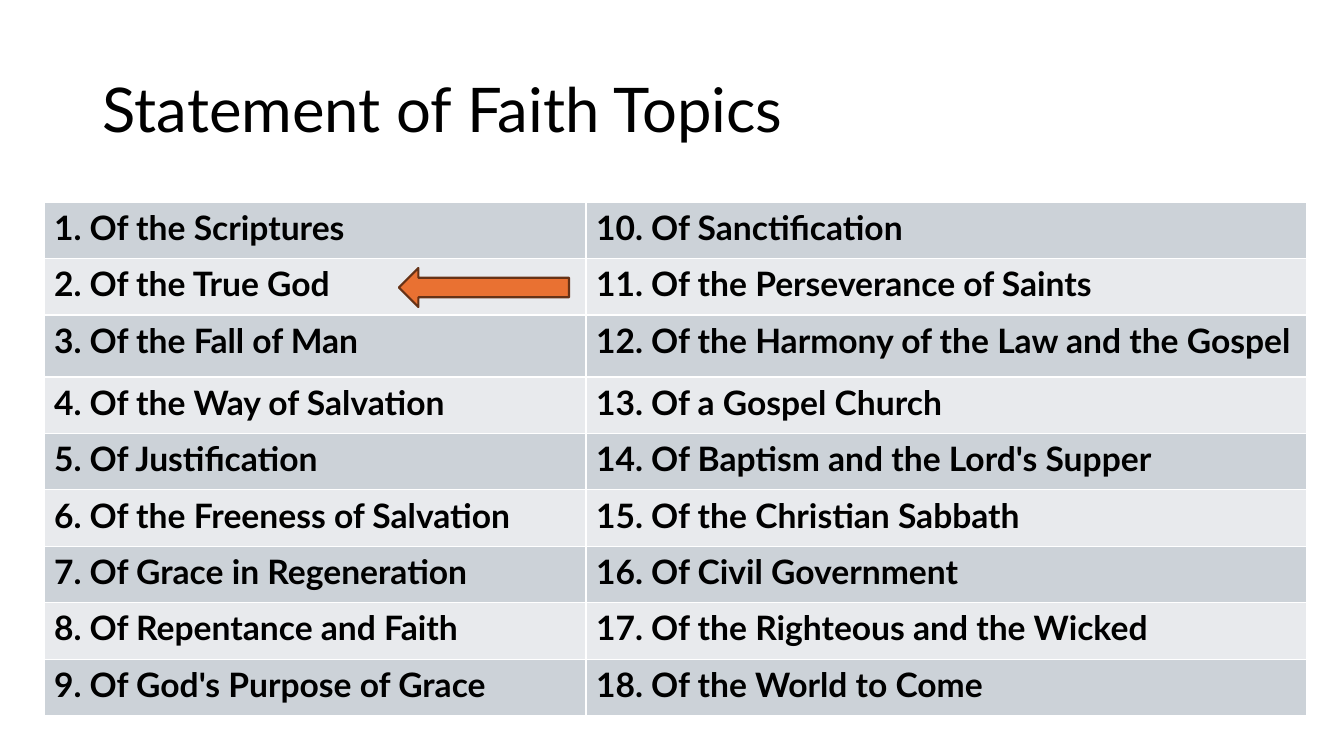
"""Build the Statement of Faith Topics slide."""
import pptx
import pptx.dml.color
import pptx.enum.shapes
import pptx.enum.text
import pptx.oxml
import pptx.oxml.ns
import pptx.util


def px(length):
    return pptx.util.Emu(round(length * 914400 / 100.8))


def color(value):
    return pptx.dml.color.RGBColor.from_string(value)


TOPICS = [
    "Of the Scriptures",
    "Of the True God",
    "Of the Fall of Man",
    "Of the Way of Salvation",
    "Of Justification",
    "Of the Freeness of Salvation",
    "Of Grace in Regeneration",
    "Of Repentance and Faith",
    "Of God's Purpose of Grace",
    "Of Sanctification",
    "Of the Perseverance of Saints",
    "Of the Harmony of the Law and the Gospel",
    "Of a Gospel Church",
    "Of Baptism and the Lord's Supper",
    "Of the Christian Sabbath",
    "Of Civil Government",
    "Of the Righteous and the Wicked",
    "Of the World to Come",
]
ROWS = 9
BANDS = ["CCD2D8", "E8EAED"]
COLUMN_WIDTHS = [542, 721]
TABLE_HEIGHT = 514
HARMONY_ROW, HARMONY_HEIGHT = 2, 62

deck = pptx.Presentation()
deck.slide_width, deck.slide_height = px(1344), px(756)
slide = deck.slides.add_slide(deck.slide_layouts[6])

heading = slide.shapes.add_textbox(px(93), px(40), px(1159), px(146)).text_frame
heading.word_wrap = True
heading.vertical_anchor = pptx.enum.text.MSO_ANCHOR.MIDDLE
heading_line = heading.paragraphs[0]
heading_line.line_spacing = 0.9
heading_run = heading_line.add_run()
heading_run.text = "Statement of Faith Topics"
heading_run.font.size = pptx.util.Pt(44)
heading_run.font.name = "Lato"
heading_run.font.color.rgb = color("000000")

topic_table = slide.shapes.add_table(
    ROWS, 2, px(44), px(202), px(sum(COLUMN_WIDTHS)), px(TABLE_HEIGHT)
).table
topic_table.first_row = False
topic_table.horz_banding = False
for column, width in zip(topic_table.columns, COLUMN_WIDTHS):
    column.width = px(width)
for row in topic_table.rows:
    row.height = px((TABLE_HEIGHT - HARMONY_HEIGHT) / (ROWS - 1))
topic_table.rows[HARMONY_ROW].height = px(HARMONY_HEIGHT)

for index, topic in enumerate(TOPICS):
    column_index, row_index = divmod(index, ROWS)
    cell = topic_table.cell(row_index, column_index)
    topic_run = cell.text_frame.paragraphs[0].add_run()
    topic_run.text = f"{index + 1}. {topic}"
    topic_run.font.size = pptx.util.Pt(24)
    topic_run.font.name = "Lato"
    topic_run.font.bold = True
    topic_run.font.color.rgb = color("000000")
    cell_properties = cell._tc.get_or_add_tcPr()
    for side in ["lnL", "lnR", "lnT", "lnB"]:
        cell_properties.append(pptx.oxml.parse_xml(
            f'<a:{side} {pptx.oxml.ns.nsdecls("a")} w="12700"><a:solidFill>'
            f'<a:srgbClr val="FFFFFF"/></a:solidFill></a:{side}>'
        ))
    cell.fill.solid()
    cell.fill.fore_color.rgb = color(BANDS[row_index % 2])

true_god_arrow = slide.shapes.add_shape(
    pptx.enum.shapes.MSO_SHAPE.LEFT_ARROW, px(399), px(268), px(170), px(39)
)
true_god_arrow.shadow.inherit = False
true_god_arrow.fill.solid()
true_god_arrow.fill.fore_color.rgb = color("E97132")
true_god_arrow.line.color.rgb = color("663216")
true_god_arrow.line.width = pptx.util.Pt(1.5)

deck.save("out.pptx")
